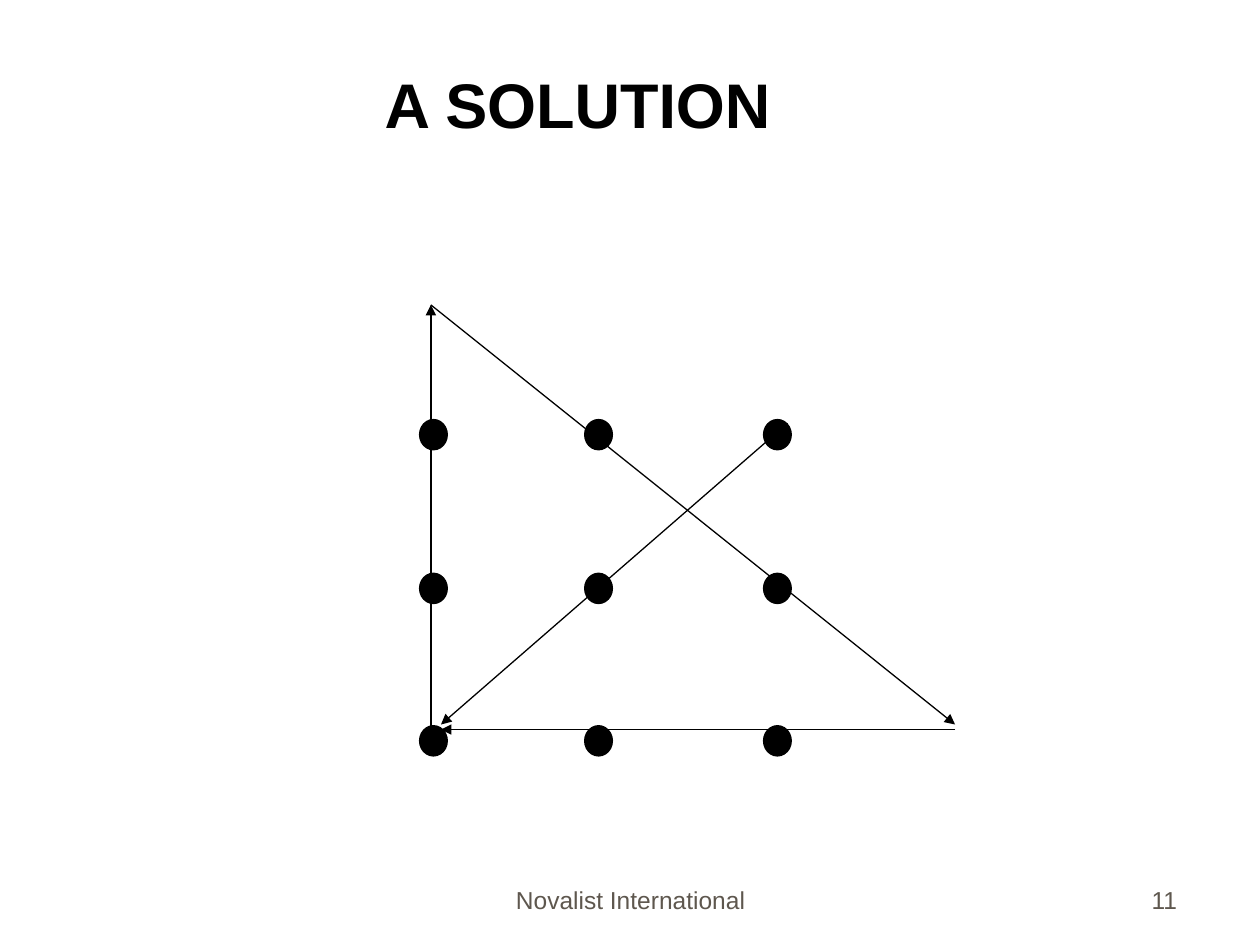
from pptx import Presentation
from pptx.dml.color import RGBColor
from pptx.enum.shapes import MSO_CONNECTOR as Connector, MSO_SHAPE as Shape
from pptx.enum.text import MSO_ANCHOR as Anchor, MSO_AUTO_SIZE as AutoSize, PP_ALIGN as Align
from pptx.oxml.ns import qn
from pptx.util import Inches, Pt
from lxml import etree

BLACK = RGBColor(0x00, 0x00, 0x00)
GRAY = RGBColor(0x5E, 0x57, 0x4E)


def write_text(box, text, align, size, color, bold):
    frame = box.text_frame
    frame.text = text
    settings = {"word_wrap": True, "auto_size": AutoSize.NONE, "vertical_anchor": Anchor.BOTTOM}
    for name, value in settings.items():
        setattr(frame, name, value)
    para = frame.paragraphs[0]
    para.alignment = align
    font = para.runs[0].font
    for name, value in {"name": "Arial", "size": Pt(size), "bold": bold}.items():
        setattr(font, name, value)
    font.color.rgb = color


def add_arrow(group, start, end):
    points = [Inches(value) for value in (*start, *end)]
    arrow = group.shapes.add_connector(Connector.STRAIGHT, *points)
    arrow.line.width = Pt(0.75)
    arrow.line.color.rgb = BLACK
    properties = arrow.line._get_or_add_ln()
    etree.SubElement(properties, qn("a:tailEnd"), type="triangle")
    etree.SubElement(arrow._element.spPr, qn("a:effectLst"))


deck = Presentation()
deck.slide_width, deck.slide_height = Inches(10), Inches(7.5)
page = deck.slides.add_slide(deck.slide_layouts[5])

title = page.shapes.title
place = {"left": 1, "top": 0.5, "width": 7.17, "height": 0.67}
for name, value in place.items():
    setattr(title, name, Inches(value))
write_text(title, "A SOLUTION", Align.CENTER, 36, BLACK, True)

footers = [
    ("Novalist International", 3.42, 3.17, Align.CENTER),
    ("11", 7.36, 2.08, Align.RIGHT),
]
for text, left, width, align in footers:
    box = page.shapes.add_textbox(Inches(left), Inches(6.81), Inches(width), Inches(0.5))
    write_text(box, text, align, 14, GRAY, False)

puzzle = page.shapes.add_group_shape()
add_arrow(puzzle, (3.42, 2.42), (7.58, 5.75))

for top in (3.33, 4.55, 5.76):
    for left in (3.33, 4.64, 6.06):
        dot = puzzle.shapes.add_shape(
            Shape.OVAL, Inches(left), Inches(top), Inches(0.22), Inches(0.24)
        )
        dot.shadow.inherit = False
        dot.fill.solid()
        dot.fill.fore_color.rgb = BLACK
        dot.line.color.rgb = BLACK
        dot.line.width = Pt(0.75)

strokes = [
    ((6.25, 3.36), (3.5, 5.75)),
    ((7.58, 5.79), (3.5, 5.79)),
    ((3.42, 5.83), (3.42, 2.42)),
]
for start, end in strokes:
    add_arrow(puzzle, start, end)

deck.save("out.pptx")
